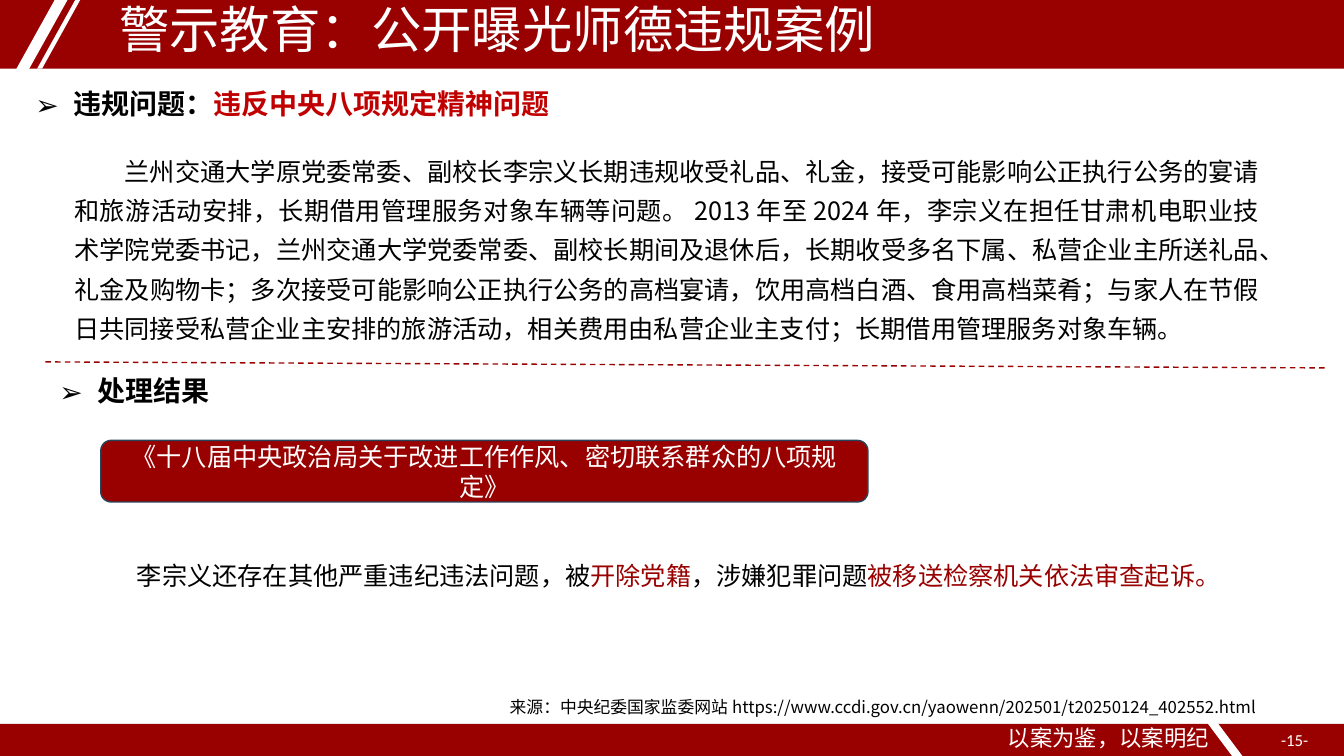
from lxml import etree
from pptx import Presentation
from pptx.dml.color import RGBColor
from pptx.enum.dml import MSO_LINE
from pptx.enum.shapes import MSO_CONNECTOR, MSO_SHAPE
from pptx.enum.text import MSO_ANCHOR, MSO_AUTO_SIZE, PP_ALIGN
from pptx.oxml.ns import qn
from pptx.util import Pt

RECT = MSO_SHAPE.RECTANGLE
ROUNDED = MSO_SHAPE.ROUNDED_RECTANGLE
SLANTED = MSO_SHAPE.PARALLELOGRAM
STRAIGHT = MSO_CONNECTOR.STRAIGHT
DASH = MSO_LINE.DASH
TOP, MIDDLE = MSO_ANCHOR.TOP, MSO_ANCHOR.MIDDLE
NO_AUTOFIT = MSO_AUTO_SIZE.NONE
LEFT, CENTER, JUSTIFY = PP_ALIGN.LEFT, PP_ALIGN.CENTER, PP_ALIGN.JUSTIFY

CJK, LATIN = "Noto Sans CJK SC", "Calibri"
DARK_RED, RED, NAVY = "990000", "C00000", "28445D"
WHITE, BLACK = "FFFFFF", "000000"

CASE = (
    "兰州交通大学原党委常委、副校长李宗义长期违规收受礼品、礼金，接受可能影响公正执行公务的宴请"
    "和旅游活动安排，长期借用管理服务对象车辆等问题。2013年至2024年，李宗义在担任甘肃机电职业技"
    "术学院党委书记，兰州交通大学党委常委、副校长期间及退休后，长期收受多名下属、私营企业主所送礼品、"
    "礼金及购物卡；多次接受可能影响公正执行公务的高档宴请，饮用高档白酒、食用高档菜肴；与家人在节假"
    "日共同接受私营企业主安排的旅游活动，相关费用由私营企业主支付；长期借用管理服务对象车辆。"
)
RESULT = [
    ("李宗义还存在其他严重违纪违法问题，被", BLACK),
    ("开除党籍", DARK_RED),
    ("，涉嫌犯罪问题", BLACK),
    ("被移送检察机关依法审查起诉。", DARK_RED),
]
SOURCE = "来源：中央纪委国家监委网站https://www.ccdi.gov.cn/yaowenn/202501/t20250124_402552.html"


def rgb(color):
    return RGBColor.from_string(color)


def place(sp, box):
    sp.left, sp.top, sp.width, sp.height = (Pt(v) for v in box)


def set_indent(p, margin, first):
    pPr = p._p.get_or_add_pPr()
    pPr.set("marL", str(Pt(margin)))
    pPr.set("indent", str(Pt(first)))
    return pPr


def write(sp, runs, size, font=CJK, bold=False, align=LEFT, spacing=1.0, anchor=TOP):
    """Write one paragraph of (text, colour) runs and return it."""
    tf = sp.text_frame
    tf.word_wrap = True
    tf.auto_size = NO_AUTOFIT
    tf.vertical_anchor = anchor
    p = tf.paragraphs[0]
    p.alignment = align
    p.line_spacing = spacing
    p.space_before = Pt(0)
    for text, color in runs:
        r = p.add_run()
        r.text = text
        r.font.size = Pt(size)
        r.font.bold = bold
        r.font.name = font
        r.font.color.rgb = rgb(color)
        etree.SubElement(r._r.get_or_add_rPr(), qn("a:ea")).set("typeface", font)
    return p


def add_block(s, box, kind, fill, line=None):
    sp = s.shapes.add_shape(kind, *(Pt(v) for v in box))
    sp.shadow.inherit = False
    sp.fill.solid()
    sp.fill.fore_color.rgb = rgb(fill)
    if line:
        sp.line.color.rgb = rgb(line)
        sp.line.width = Pt(1)
    else:
        sp.line.fill.background()
    return sp


def add_stripe(s, box, slant, flipped=False):
    sp = add_block(s, box, SLANTED, WHITE)
    sp.adjustments[0] = slant
    if flipped:
        sp._element.spPr.find(qn("a:xfrm")).set("flipH", "1")


def add_text(s, box, runs, size, **style):
    sp = s.shapes.add_textbox(*(Pt(v) for v in box))
    return write(sp, runs, size, **style)


def add_body(s, box, runs):
    p = add_text(s, box, runs, 18, align=JUSTIFY, spacing=1.3)
    set_indent(p, 0, 36)


def fill_title(sp, box, text):
    place(sp, box)
    write(sp, [(text, WHITE)], 36, spacing=0.9, anchor=MIDDLE)
    # Bring the title in front of the red band
    sp._element.getparent().append(sp._element)


def fill_heading(sp, box, runs):
    place(sp, box)
    p = write(sp, runs, 20, bold=True)
    pPr = set_indent(p, 27, -27)
    etree.SubElement(pPr, qn("a:buFont")).set("typeface", "Wingdings")
    bullet = etree.SubElement(pPr, qn("a:buChar"))
    bullet.set("char", "➢")
    pPr.find(qn("a:buFont")).set("typeface", CJK)


def add_divider(s, x1, y1, x2, y2):
    line = s.shapes.add_connector(STRAIGHT, Pt(x1), Pt(y1), Pt(x2), Pt(y2))
    line.line.color.rgb = rgb(DARK_RED)
    line.line.width = Pt(1)
    line.line.dash_style = DASH
    etree.SubElement(line._element.spPr, qn("a:effectLst"))


def main():
    prs = Presentation()
    prs.slide_width, prs.slide_height = Pt(960), Pt(540)
    s = prs.slides.add_slide(prs.slide_layouts[3])
    title, problem, outcome = s.placeholders

    add_block(s, (0, 0, 960, 49), RECT, DARK_RED)
    add_block(s, (0, 517, 960, 23), RECT, DARK_RED)
    add_stripe(s, (862.5, 516.5, 25, 23.5), 0.75, flipped=True)
    add_stripe(s, (11.5, 0, 36.7, 49.5), 0.75)
    add_stripe(s, (26.6, -0.5, 31, 49.5), 0.885)

    fill_title(title, (77.8, 2, 725, 42.5), "警示教育：公开曝光师德违规案例")
    fill_heading(problem, (18, 58.3, 686, 31.7),
                 [("违规问题：", BLACK), ("违反中央八项规定精神问题", RED)])
    add_body(s, (46, 101.5, 860.5, 155.5), [(CASE, BLACK)])
    add_divider(s, 32.4, 258.5, 949, 262.8)

    fill_heading(outcome, (35.3, 263.5, 333.4, 37.4), [("处理结果", BLACK)])
    rule = add_block(s, (72, 314.6, 548, 44), ROUNDED, DARK_RED, NAVY)
    write(rule, [("《十八届中央政治局关于改进工作作风、密切联系群众的八项规定》", WHITE)],
          18, align=CENTER, anchor=MIDDLE)
    add_body(s, (54.7, 390.2, 851.8, 98), RESULT)

    add_text(s, (357, 494, 611, 21.6), [(SOURCE, BLACK)], 12)
    add_text(s, (712.8, 514, 206, 26.6), [("以案为鉴，以案明纪", WHITE)], 16)
    add_text(s, (899.3, 517.7, 51, 28.8), [("-15-", WHITE)], 12, font=LATIN, align=CENTER)
    prs.save("out.pptx")


if __name__ == "__main__":
    main()
